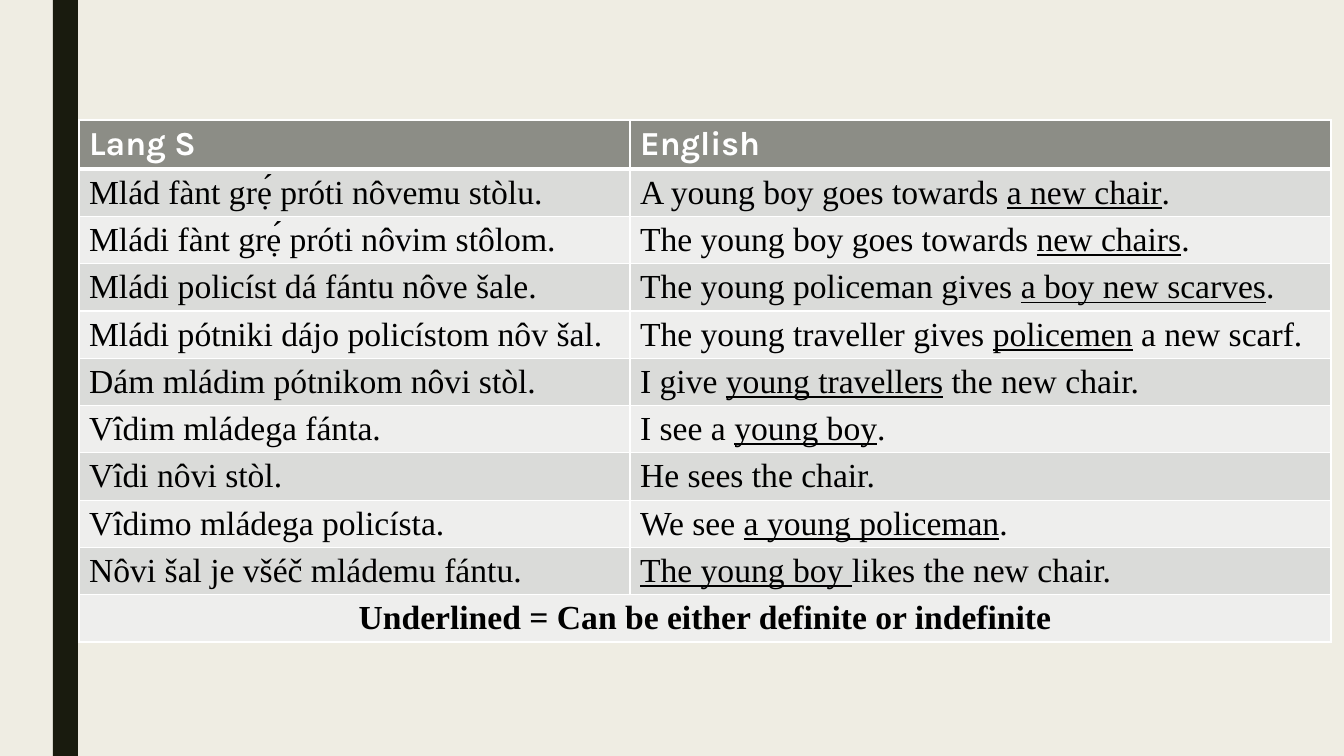
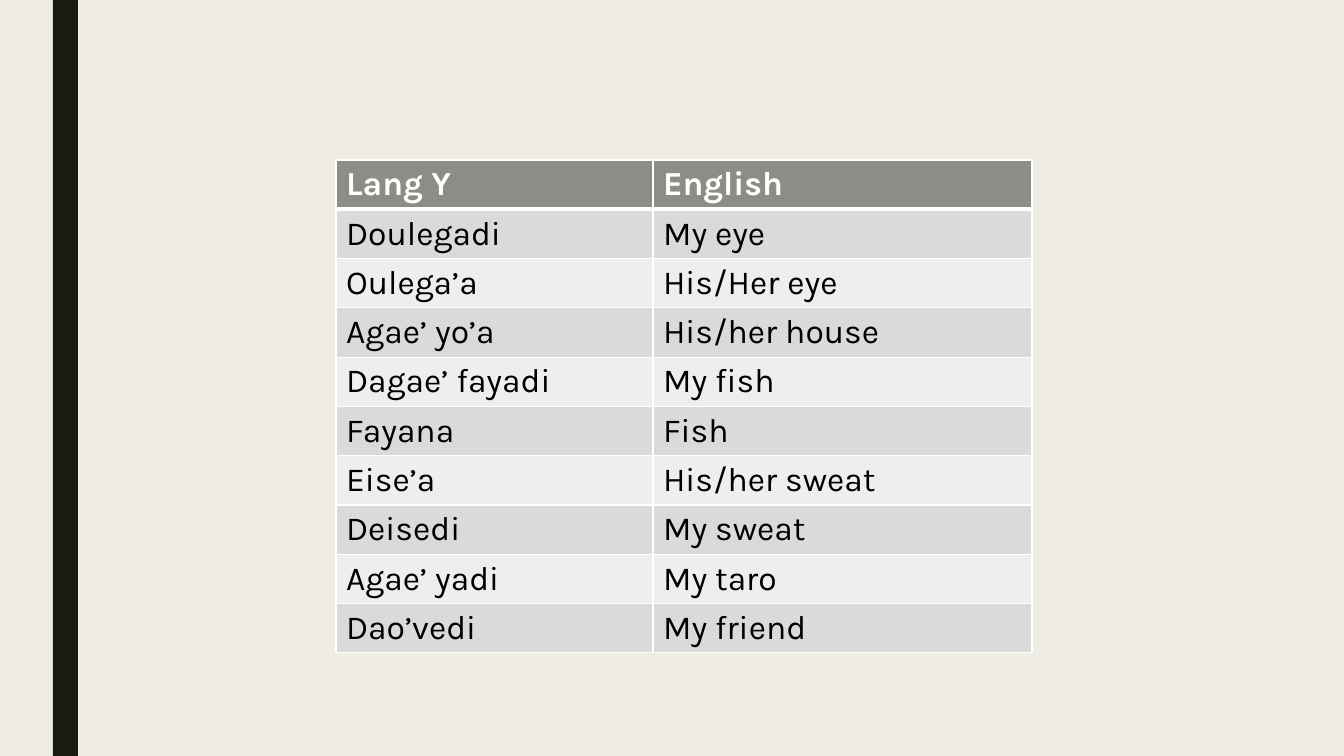
from lxml import etree
from pptx import Presentation
from pptx.dml.color import RGBColor
from pptx.enum import shapes, text
from pptx.oxml import ns
from pptx.util import Emu, Pt

PX_PER_INCH = 100.8
SLIDE_WIDTH, SLIDE_HEIGHT = 1344, 756
ROW_HEIGHT = 47

PAPER = RGBColor(0xEF, 0xED, 0xE3)
BAND = RGBColor(0x19, 0x1B, 0x0E)
HEADER = RGBColor(0x8C, 0x8D, 0x86)
STRIPES = (RGBColor(0xEE, 0xEE, 0xED), RGBColor(0xDA, 0xDB, 0xD9))
WHITE = RGBColor(0xFF, 0xFF, 0xFF)
BLACK = RGBColor(0x00, 0x00, 0x00)

HEADING_FONT = "Karla"
SERIF_FONT = "Times New Roman"

# Underscores enclose underlined words
LANG_S_ROWS = [
    ("Lang S", "English"),
    ("Mlád fànt grẹ́ próti nôvemu stòlu.", "A young boy goes towards _a new chair_."),
    ("Mládi fànt grẹ́ próti nôvim stôlom.", "The young boy goes towards _new chairs_."),
    ("Mládi policíst dá fántu nôve šale.", "The young policeman gives _a boy new scarves_."),
    ("Mládi pótniki dájo policístom nôv šal.", "The young traveller gives _policemen_ a new scarf."),
    ("Dám mládim pótnikom nôvi stòl.", "I give _young travellers_ the new chair."),
    ("Vîdim mládega fánta.", "I see a _young boy_."),
    ("Vîdi nôvi stòl.", "He sees the chair."),
    ("Vîdimo mládega policísta.", "We see _a young policeman_."),
    ("Nôvi šal je všéč mládemu fántu.", "_The young boy _likes the new chair."),
    ("Underlined = Can be either definite or indefinite",),
]
LANG_Y_ROWS = [
    ("Lang Y", "English"),
    ("Doulegadi", "My eye"),
    ("Oulega’a", "His/Her eye"),
    ("Agae’ yo’a", "His/her house"),
    ("Dagae’ fayadi", "My fish"),
    ("Fayana", "Fish"),
    ("Eise’a", "His/her sweat"),
    ("Deisedi", "My sweat"),
    ("Agae’ yadi", "My taro"),
    ("Dao’vedi", "My friend"),
]


def px(length):
    return Emu(round(length * 914400 / PX_PER_INCH))


def style_master(deck, page):
    """Put the background and the side band on the slide master."""
    master = deck.slide_master
    master.background.fill.solid()
    master.background.fill.fore_color.rgb = PAPER
    band = page.shapes.add_shape(
        shapes.MSO_SHAPE.RECTANGLE, px(53), 0, px(25), px(SLIDE_HEIGHT))
    band.shadow.inherit = False
    band.fill.solid()
    band.fill.fore_color.rgb = BAND
    band.line.fill.background()
    master.shapes.element.insert(2, band.element)


def set_borders(cell, widths):
    """Draw white cell borders; widths maps a side to points."""
    properties = cell._tc.get_or_add_tcPr()
    for index, (side, width) in enumerate(widths.items()):
        line = etree.Element(ns.qn(f"a:ln{side}"), w=str(Pt(width)))
        fill = etree.SubElement(line, ns.qn("a:solidFill"))
        etree.SubElement(fill, ns.qn("a:srgbClr"), val=str(WHITE))
        properties.insert(index, line)


def write_text(cell, content, color, **font_values):
    para = cell.text_frame.paragraphs[0]
    for index, part in enumerate(content.split("_")):
        if not part:
            continue
        span = para.add_run()
        span.text = part
        span.font.color.rgb = color
        values = {"size": Pt(24), "underline": index % 2 == 1, **font_values}
        for name, value in values.items():
            setattr(span.font, name, value)


def add_word_table(page, left, top, column_widths, rows, body_font):
    frame = page.shapes.add_table(
        len(rows), len(column_widths), px(left), px(top),
        px(sum(column_widths)), px(ROW_HEIGHT * len(rows)))
    table = frame.table
    table.first_row = table.horz_banding = False
    for column, width in zip(table.columns, column_widths):
        column.width = px(width)

    for row_index, contents in enumerate(rows):
        is_header = row_index == 0
        is_note = len(contents) == 1
        table.rows[row_index].height = px(ROW_HEIGHT)

        # Fill and borders of the row
        cells = [table.cell(row_index, i) for i in range(len(column_widths))]
        for cell in cells:
            cell.fill.solid()
            cell.fill.fore_color.rgb = HEADER if is_header else STRIPES[row_index % 2]
            set_borders(cell, {"L": 1, "R": 1, "T": 3 if row_index == 1 else 1,
                               "B": 3 if is_header else 1})

        # Text of the row
        if is_note:
            cells[0].merge(cells[-1])
            cells[0].text_frame.paragraphs[0].alignment = text.PP_ALIGN.CENTER
        for cell, content in zip(cells, contents):
            write_text(cell, content, WHITE if is_header else BLACK,
                       name=HEADING_FONT if is_header else body_font,
                       bold=is_header or is_note)


def main():
    deck = Presentation()
    deck.slide_width, deck.slide_height = px(SLIDE_WIDTH), px(SLIDE_HEIGHT)
    blank = deck.slide_layouts.get_by_name("Blank")

    # Lang S sentences
    page = deck.slides.add_slide(blank)
    style_master(deck, page)
    add_word_table(page, 79, 120, (551, 701), LANG_S_ROWS, SERIF_FONT)

    # Lang Y words
    page = deck.slides.add_slide(blank)
    add_word_table(page, 336, 160, (317, 379), LANG_Y_ROWS, HEADING_FONT)

    deck.save("out.pptx")


if __name__ == "__main__":
    main()
